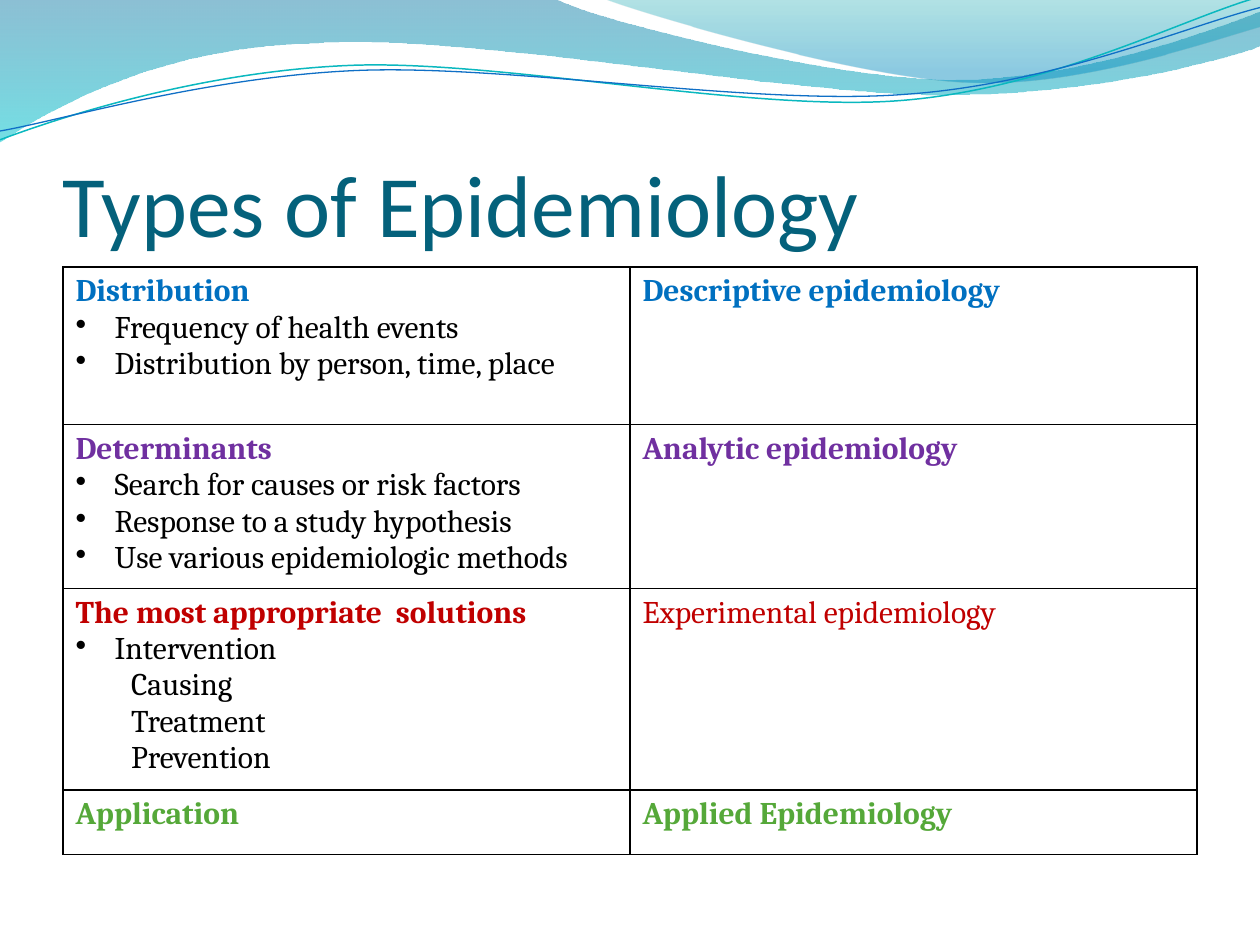
from lxml.etree import SubElement
from pptx import Presentation
from pptx.dml.color import RGBColor
from pptx.enum.text import MSO_ANCHOR
from pptx.oxml.ns import qn
from pptx.util import Inches, Pt

BLACK = RGBColor(0x00, 0x00, 0x00)
TITLE_TEAL = RGBColor(0x04, 0x61, 0x7B)
BLUE = RGBColor(0x00, 0x70, 0xC0)
PURPLE = RGBColor(0x70, 0x30, 0xA0)
RED = RGBColor(0xC0, 0x00, 0x00)
GREEN = RGBColor(0x55, 0xA8, 0x39)
WAVE_BLUE = RGBColor(0x00, 0x74, 0xA1)
WAVE_AQUA = RGBColor(0x00, 0xC6, 0xCF)
CREST_TEAL = RGBColor(0x00, 0xA1, 0xA9)
CREST_BLUE = RGBColor(0x00, 0x8B, 0xBF)
LINE_TEAL = RGBColor(0x0A, 0xB8, 0xBF)
LINE_BLUE = RGBColor(0x0F, 0x6F, 0xC6)

deck = Presentation()
deck.slide_width, deck.slide_height = Inches(10), Inches(7.5)
page = deck.slides.add_slide(deck.slide_layouts[6])


def add_curve(start, segments, close):
    """Draw lines (x, y) and cubic curves (x1, y1, x2, y2, x, y), in inches."""
    builder = page.shapes.build_freeform(Inches(start[0]), Inches(start[1]))
    for segment in segments:
        points = [(Inches(x), Inches(y)) for x, y in zip(segment[::2], segment[1::2])]
        builder.add_line_segments(points, close=False)
    if close:
        builder.add_line_segments([], close=True)
    shape = builder.convert_to_shape()
    shape.shadow.inherit = False
    # Merge the three points of each curve into one cubic segment
    line_nodes = iter(list(shape._element.iter(qn("a:lnTo"))))
    for segment in segments:
        first = next(line_nodes)
        if len(segment) == 6:
            first.tag = qn("a:cubicBezTo")
            for node in (next(line_nodes), next(line_nodes)):
                first.append(node[0])
                node.getparent().remove(node)
    return shape


# Translucent waves: start, segments, gradient stops (position, colour, opacity %)
waves = [
    ((0, 0),
     [(4.4, -0.01), (4.76, 0.17, 6.64, 0.63, 7.58, 0.63),
      (8.53, 0.63, 9.58, 0.26, 10, 0.09), (10.01, 0.36),
      (9.83, 0.44, 8.7, 0.76, 7.46, 0.75), (6.22, 0.75, 3.82, 0.28, 2.57, 0.34),
      (1.29, 0.36, 0.46, 0.83, -0.01, 1.13)],
     [(0, WAVE_BLUE, 45), (1, WAVE_AQUA, 55)]),
    ((4.79, -0.01),
     [(5.09, 0.11, 6.82, 0.62, 7.69, 0.65), (8.56, 0.69, 9.61, 0.32, 10, 0.21), (10, 0)],
     [(0, CREST_TEAL, 30), (0.8, CREST_BLUE, 45)]),
]
for start, segments, stops in waves:
    wave = add_curve(start, segments, True)
    wave.line.fill.background()
    wave.fill.gradient()
    wave.fill.gradient_angle = 270
    for stop, (position, colour, opacity) in zip(wave.fill.gradient_stops, stops):
        stop.position = position
        stop.color.rgb = colour
    colour_nodes = wave._element.spPr.iter(qn("a:srgbClr"))
    for node, (position, colour, opacity) in zip(colour_nodes, stops):
        SubElement(node, qn("a:alpha")).set("val", str(opacity * 1000))

# Thin wave lines
wave_lines = [
    ((0, 1.11),
     [(0.48, 0.93, 1.58, 0.57, 2.77, 0.52), (3.95, 0.47, 5.93, 0.89, 7.13, 0.8),
      (8.33, 0.71, 9.38, 0.15, 9.98, -0.02)], LINE_TEAL, 0.85),
    ((0, 1.04),
     [(0.47, 0.96, 1.64, 0.61, 2.83, 0.56), (4.03, 0.51, 5.97, 0.84, 7.17, 0.75),
      (8.36, 0.67, 9.41, 0.21, 10, 0.06)], LINE_BLUE, 0.75),
]
for start, segments, colour, width in wave_lines:
    wave_line = add_curve(start, segments, False)
    wave_line.fill.background()
    wave_line.line.color.rgb = colour
    wave_line.line.width = Pt(width)

# Title
title_box = page.shapes.add_textbox(Inches(0.5), Inches(0.77), Inches(9), Inches(1.25))
frame = title_box.text_frame
frame.word_wrap = True
frame.vertical_anchor = MSO_ANCHOR.BOTTOM
frame.margin_left = frame.margin_right = frame.margin_bottom = 0
para = frame.paragraphs[0]
para.text = "Types of Epidemiology"
para.font.name, para.font.size = "Calibri", Pt(50)
para.font.color.rgb = TITLE_TEAL

# Table rows: height, colour, heading, bullets, indented lines, type, type is bold
rows = [
    (1.25, BLUE, "Distribution",
     ["Frequency of health events", "Distribution by person, time, place"], [],
     "Descriptive epidemiology", True),
    (1.26, PURPLE, "Determinants",
     ["Search for causes or risk factors", "Response to a study hypothesis",
      "Use various epidemiologic methods"], [],
     "Analytic epidemiology", True),
    (1.54, RED, "The most appropriate  solutions",
     ["Intervention"], ["Causing", "Treatment", "Prevention"],
     "Experimental epidemiology", False),
    (0.51, GREEN, "Application", [], [], "Applied Epidemiology", True),
]
table = page.shapes.add_table(len(rows), 2, Inches(0.5), Inches(2.12),
                              Inches(9), Inches(sum(row[0] for row in rows))).table
table.first_row = table.horz_banding = False

for index, (height, colour, heading, bullets, indented, kind, kind_bold) in enumerate(rows):
    table.rows[index].height = Inches(height)
    # Each line: text, colour, bold, left margin, hanging indent
    topic = [(heading, colour, True, 0, 0)]
    topic += [(text, BLACK, False, 0.31, -0.31) for text in bullets]
    topic += [(text, BLACK, False, 0.44, 0) for text in indented]
    for column, lines in enumerate([topic, [(kind, colour, kind_bold, 0, 0)]]):
        cell = table.cell(index, column)
        cell.text = "\n".join(line[0] for line in lines)
        for para, (text, ink, bold, margin, indent) in zip(cell.text_frame.paragraphs, lines):
            # Row height and bullets follow the font of the run
            span = para.runs[0]
            span.font.name, span.font.size = "Cambria", Pt(18)
            span.font.bold = bold
            span.font.color.rgb = ink
            if margin:
                properties = para._p.get_or_add_pPr()
                properties.set("marL", str(Inches(margin)))
                properties.set("indent", str(Inches(indent)))
            if indent:
                SubElement(properties, qn("a:buChar"), char="•")
        # Black cell borders
        cell_properties = cell._tc.get_or_add_tcPr()
        for side in ("a:lnL", "a:lnR", "a:lnT", "a:lnB"):
            border = SubElement(cell_properties, qn(side), w=str(Pt(1)))
            fill = SubElement(border, qn("a:solidFill"))
            SubElement(fill, qn("a:srgbClr"), val=str(BLACK))
        cell.fill.background()

deck.save("out.pptx")
